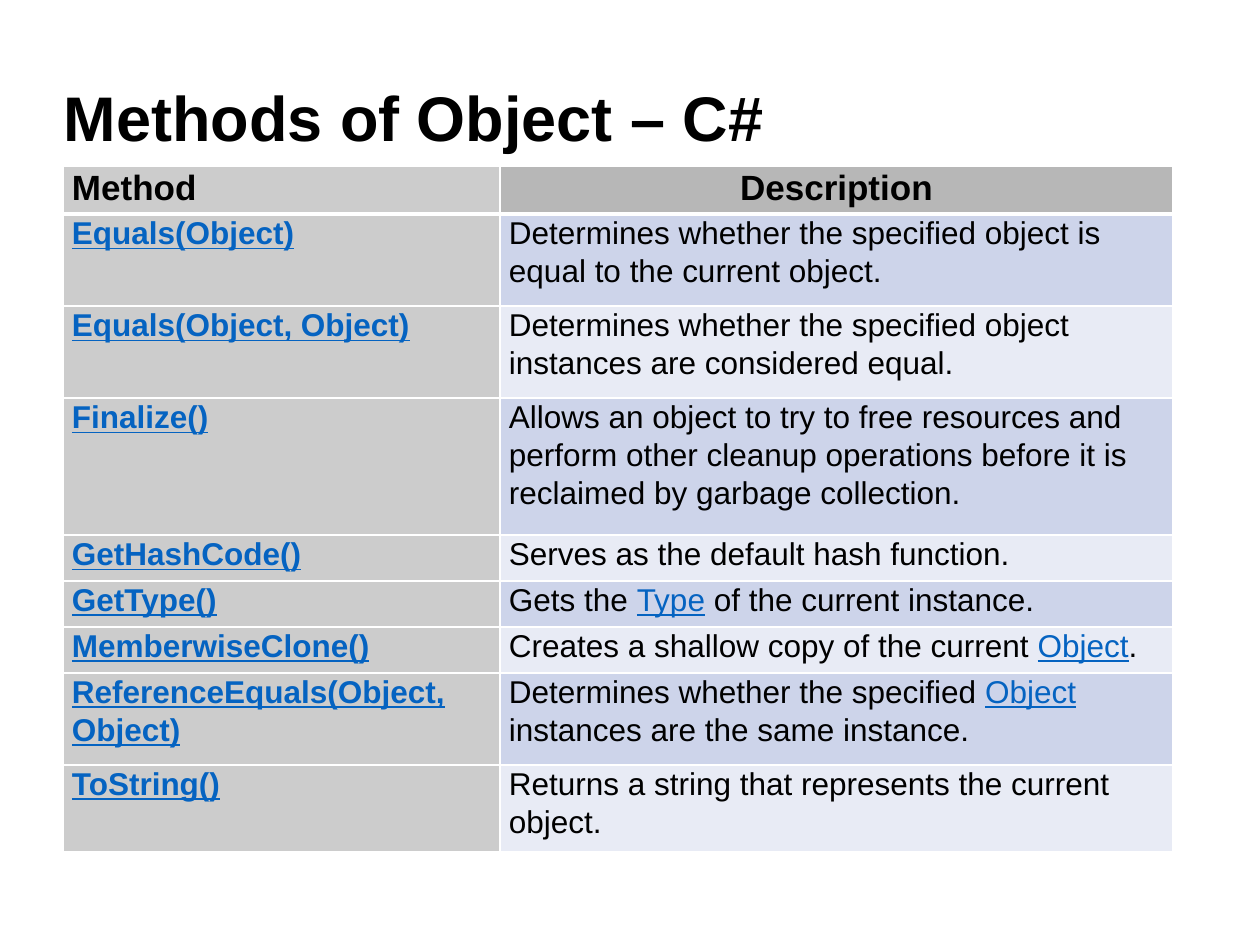
import dataclasses

import lxml.etree
import pptx
import pptx.dml.color
import pptx.enum.text
import pptx.oxml.ns
import pptx.table
import pptx.text.text
import pptx.util

RGB = pptx.dml.color.RGBColor
ALIGN = pptx.enum.text.PP_ALIGN
ANCHOR = pptx.enum.text.MSO_ANCHOR

BLACK = RGB(0x00, 0x00, 0x00)
WHITE = RGB(0xFF, 0xFF, 0xFF)
LINK = RGB(0x05, 0x63, 0xC1)
METHOD_FILL = RGB(0xCC, 0xCC, 0xCC)
HEADER_FILL = RGB(0xB7, 0xB7, 0xB7)
BANDS = (RGB(0xCD, 0xD4, 0xEA), RGB(0xE8, 0xEB, 0xF5))

FONT = "Arial"
PX_PER_INCH = 126
COLUMN_WIDTHS = (437, 673)
HEADER_HEIGHT = 48


@dataclasses.dataclass(frozen=True)
class Method:
    name: str
    description: str
    height: int
    link: str = ""


METHODS = (
    Method("Equals(Object)",
           "Determines whether the specified object is equal to the current object.", 92),
    Method("Equals(Object, Object)",
           "Determines whether the specified object instances are considered equal.", 92),
    Method("Finalize()",
           "Allows an object to try to free resources and perform other cleanup "
           "operations before it is reclaimed by garbage collection.", 137),
    Method("GetHashCode()", "Serves as the default hash function.", 46),
    Method("GetType()", "Gets the Type of the current instance.", 46, "Type"),
    Method("MemberwiseClone()",
           "Creates a shallow copy of the current Object.", 46, "Object"),
    Method("ReferenceEquals(Object, Object)",
           "Determines whether the specified Object instances are the same instance.",
           92, "Object"),
    Method("ToString()", "Returns a string that represents the current object.", 87),
)


def px(n: int) -> pptx.util.Emu:
    return pptx.util.Emu(round(n * 914400 / PX_PER_INCH))


def write(tf: pptx.text.text.TextFrame, text: str, *, size: int = 18,
          bold: bool = False, link: str = "", align: ALIGN = ALIGN.LEFT,
          spacing: float = 1.07) -> None:
    p = tf.paragraphs[0]
    p.alignment = align
    p.line_spacing = spacing
    parts = text.partition(link) if link else (text,)
    for part in filter(None, parts):
        r = p.add_run()
        r.text = part
        r.font.name = FONT
        r.font.size = pptx.util.Pt(size)
        r.font.bold = bold
        r.font.underline = part == link
        r.font.color.rgb = LINK if part == link else BLACK


def format_cell(cell: pptx.table._Cell, fill: RGB, top: int = 1, bottom: int = 1) -> None:
    cell.margin_left = cell.margin_right = px(9)
    cell.margin_top = cell.margin_bottom = 0
    cell.vertical_anchor = ANCHOR.TOP
    tc_pr = cell._tc.get_or_add_tcPr()
    qn = pptx.oxml.ns.qn
    for side, width in (("L", 1), ("R", 1), ("T", top), ("B", bottom)):
        ln = lxml.etree.SubElement(tc_pr, qn(f"a:ln{side}"), w=str(pptx.util.Pt(width)))
        solid = lxml.etree.SubElement(ln, qn("a:solidFill"))
        lxml.etree.SubElement(solid, qn("a:srgbClr"), val=str(WHITE))
    cell.fill.solid()
    cell.fill.fore_color.rgb = fill


def add_title(s: pptx.slide.Slide, text: str) -> None:
    tf = s.shapes.add_textbox(px(51), px(71), px(1160), px(106)).text_frame
    tf.word_wrap = True
    tf.vertical_anchor = ANCHOR.MIDDLE
    tf.margin_left = tf.margin_right = px(13)
    tf.margin_top, tf.margin_bottom = 0, px(6)
    write(tf, text, size=36, bold=True, spacing=0.9)


def add_methods_table(s: pptx.slide.Slide, methods: tuple[Method, ...]) -> None:
    heights = [HEADER_HEIGHT] + [m.height for m in methods]
    table = s.shapes.add_table(len(heights), len(COLUMN_WIDTHS), px(63), px(166),
                               px(sum(COLUMN_WIDTHS)), px(sum(heights))).table
    for column, width in zip(table.columns, COLUMN_WIDTHS):
        column.width = px(width)
    for row, height in zip(table.rows, heights):
        row.height = px(height)

    headers = (("Method", METHOD_FILL, ALIGN.LEFT),
               ("Description", HEADER_FILL, ALIGN.CENTER))
    for i, (text, fill, align) in enumerate(headers):
        cell = table.cell(0, i)
        format_cell(cell, fill, bottom=3)
        write(cell.text_frame, text, size=20, bold=True, align=align)

    for i, m in enumerate(methods):
        name, description = table.cell(i + 1, 0), table.cell(i + 1, 1)
        top = 3 if i == 0 else 1
        format_cell(name, METHOD_FILL, top=top)
        write(name.text_frame, m.name, bold=True, link=m.name)
        format_cell(description, BANDS[i % len(BANDS)], top=top)
        write(description.text_frame, m.description, link=m.link)


def main() -> None:
    prs = pptx.Presentation()
    prs.slide_width, prs.slide_height = px(1260), px(945)
    s = prs.slides.add_slide(prs.slide_layouts[6])
    add_title(s, "Methods of Object – C#")
    add_methods_table(s, METHODS)
    prs.save("out.pptx")


if __name__ == "__main__":
    main()
